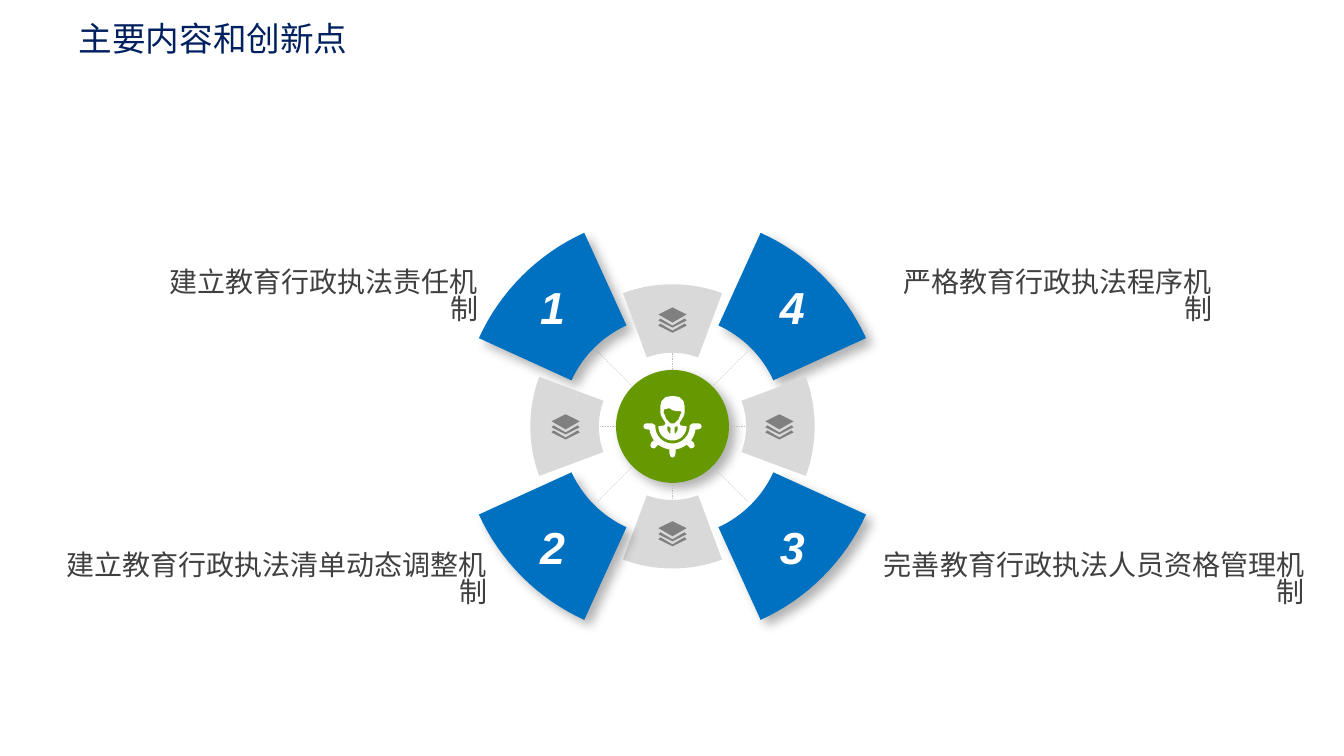
from math import cos, radians, sin

from lxml.etree import SubElement
from pptx import Presentation
from pptx.dml.color import RGBColor
from pptx.enum.dml import MSO_LINE
from pptx.enum.shapes import MSO_CONNECTOR, MSO_SHAPE
from pptx.enum.text import MSO_ANCHOR, MSO_AUTO_SIZE, PP_ALIGN
from pptx.oxml.ns import qn
from pptx.util import Inches, Pt

HUB = (6.67, 4.23)
HAN = "Noto Sans CJK SC"
BLUE, GRAY, GREEN, WHITE = "0070C0", "D9D9D9", "669900", "FFFFFF"
NUMBERS = {45: "3", 135: "2", 315: "4", 225: "1"}
LABELS = [
    ("严格教育行政执法程序机制", 12.12, 2.63, 3.5),
    ("建立教育行政执法责任机制", 4.84, 2.63, 3.5),
    ("完善教育行政执法人员资格管理机制", 13.04, 5.44, 4.6),
    ("建立教育行政执法清单动态调整机制", 4.93, 5.44, 4.6),
]


def color(code):
    return RGBColor.from_string(code)


def polar(r, angle):
    return r * cos(radians(angle)), r * sin(radians(angle))


def arc(r, start, end, steps=16):
    return [polar(r, start + (end - start) * i / steps) for i in range(steps + 1)]


def mirror(points):
    return [(-x, y) for x, y in reversed(points)]


def paint(shape, code, raised=False):
    shape.shadow.inherit = False
    shape.fill.solid()
    shape.fill.fore_color.rgb = color(code)
    shape.line.fill.background()
    if raised:
        effects = shape._element.spPr.find(qn("a:effectLst"))
        shadow = SubElement(effects, qn("a:outerShdw"), blurRad=str(Pt(8)),
                            dist=str(Pt(6)), dir=str(45 * 60000), algn="tl")
        black = SubElement(shadow, qn("a:srgbClr"), val="000000")
        SubElement(black, qn("a:alpha"), val="30000")


def outline(slide, center, contours, code, raised=False):
    """Draw closed contours, given in inches from the center, as one shape."""
    cx, cy = center
    builder = None
    for contour in contours:
        points = [(Inches(cx + x), Inches(cy + y)) for x, y in contour]
        if builder is None:
            builder = slide.shapes.build_freeform(*points[0])
        else:
            builder.move_to(*points[0])
        builder.add_line_segments(points[1:], close=True)
    shape = builder.convert_to_shape()
    paint(shape, code, raised)
    return shape


def write(frame, text, size, code, font, align):
    frame.text = text
    para = frame.paragraphs[0]
    para.alignment = align
    if font == HAN:
        para.line_spacing = 0.82
    run = para.runs[0]
    run.font.size = Pt(size)
    run.font.name = font
    run.font.color.rgb = color(code)
    SubElement(run._r.get_or_add_rPr(), qn("a:ea"), typeface=font)
    return run


def add_title(slide, left, top, width, height):
    title = slide.shapes.title
    title.left, title.top = Inches(left), Inches(top)
    title.width, title.height = Inches(width), Inches(height)
    frame = title.text_frame
    frame.auto_size = MSO_AUTO_SIZE.NONE
    frame.vertical_anchor = MSO_ANCHOR.TOP
    write(frame, "主要内容和创新点", 24, "002060", HAN, PP_ALIGN.LEFT)


def add_label(slide, text, right, top, width):
    box = slide.shapes.add_textbox(Inches(right - width), Inches(top),
                                   Inches(width), Inches(0.76))
    box.text_frame.word_wrap = True
    write(box.text_frame, text, 20, "404040", HAN, PP_ALIGN.RIGHT)


def add_helm(slide, center):
    """Draw the person behind a steering wheel."""
    wheel = (arc(0.17, 90, 0)
             + [(0.17, -0.01), (0.2, -0.03), (0.26, -0.03), (0.28, -0.02), (0.29, 0),
                (0.28, 0.02), (0.26, 0.03)]
             + arc(0.23, 8, 37)
             + [(0.21, 0.16), (0.22, 0.19), (0.21, 0.21), (0.18, 0.22), (0.14, 0.18)]
             + arc(0.23, 52, 82)
             + [(0.03, 0.27), (0.02, 0.3), (0, 0.31)])
    body = [(0, -0.3), (0.02, -0.3), (0.07, -0.29), (0.11, -0.25), (0.12, -0.2),
            (0.12, -0.13), (0.11, -0.1), (0.08, -0.05), (0.07, -0.03),
            (0.08, -0.01)] + arc(0.14, 0, 90)
    face = [(-0.03, -0.18), (-0.08, -0.17), (-0.09, -0.14), (-0.08, -0.12),
            (-0.06, -0.07), (-0.02, -0.03), (0.02, -0.03), (0.06, -0.07),
            (0.08, -0.12), (0.09, -0.14), (0.08, -0.15), (0.04, -0.15), (0, -0.16)]
    slot = [(0.02, 0.01), (0.04, 0), (0.05, 0), (0.05, 0.04), (0.03, 0.07),
            (0.02, 0.07)]
    outline(slide, center, [wheel + mirror(wheel), body + mirror(body),
                            face, slot, mirror(slot)], WHITE)


def add_layers(slide, center):
    top = [(0, -0.12), (0.14, -0.05), (0, 0.03), (-0.14, -0.05)]
    fold = [(-0.12, -0.01), (0, 0.06), (0.12, -0.01),
            (0.14, 0.01), (0, 0.08), (-0.14, 0.01)]
    lower = [(x, y + 0.05) for x, y in fold]
    outline(slide, center, [top, fold, lower], "808080")


def add_hub(slide, center, r):
    cx, cy = center
    disc = slide.shapes.add_shape(MSO_SHAPE.OVAL, Inches(cx - r), Inches(cy - r),
                                  Inches(2 * r), Inches(2 * r))
    paint(disc, GREEN, raised=True)
    add_helm(slide, center)


def add_spokes(slide, center, start):
    cx, cy = center
    for angle in range(0, 360, 45):
        end = 1.06 if angle % 90 else 0.75
        (x1, y1), (x2, y2) = polar(start, angle), polar(end, angle)
        spoke = slide.shapes.add_connector(
            MSO_CONNECTOR.STRAIGHT, Inches(cx + x1), Inches(cy + y1),
            Inches(cx + x2), Inches(cy + y2))
        spoke.line.color.rgb = color("BFBFBF")
        spoke.line.width = Pt(0.25)
        spoke.line.dash_style = MSO_LINE.DASH
        SubElement(spoke._element.spPr, qn("a:effectLst"))


def add_sector(slide, center, angle):
    """Draw a numbered blue sector on a diagonal, or a gray one on an axis."""
    number = NUMBERS.get(angle)
    inner, outer, half = (1.1, 2.11, 20.5) if number else (0.73, 1.41, 20.4)
    ring = (arc(inner, angle - half, angle + half)
            + arc(outer, angle + half, angle - half))
    shape = outline(slide, center, [ring], BLUE if number else GRAY, bool(number))
    if number:
        frame = shape.text_frame
        frame.vertical_anchor = MSO_ANCHOR.MIDDLE
        run = write(frame, number, 32, WHITE, "Arial", PP_ALIGN.CENTER)
        run.font.bold = run.font.italic = True


def add_wheel(slide, center):
    add_hub(slide, center, 0.56)
    add_spokes(slide, center, 0.56)
    for angle in [90, *NUMBERS, 270, 0, 180]:
        add_sector(slide, center, angle)
    for angle in range(0, 360, 90):
        x, y = polar(1.06, angle)
        add_layers(slide, (center[0] + x, center[1] + y))


def main():
    deck = Presentation()
    deck.slide_width, deck.slide_height = Inches(13.33), Inches(7.5)
    slide = deck.slides.add_slide(deck.slide_layouts[5])
    add_title(slide, 0.68, 0.2, 3, 0.5)
    add_wheel(slide, HUB)
    for label in LABELS:
        add_label(slide, *label)
    deck.save("out.pptx")


if __name__ == "__main__":
    main()
